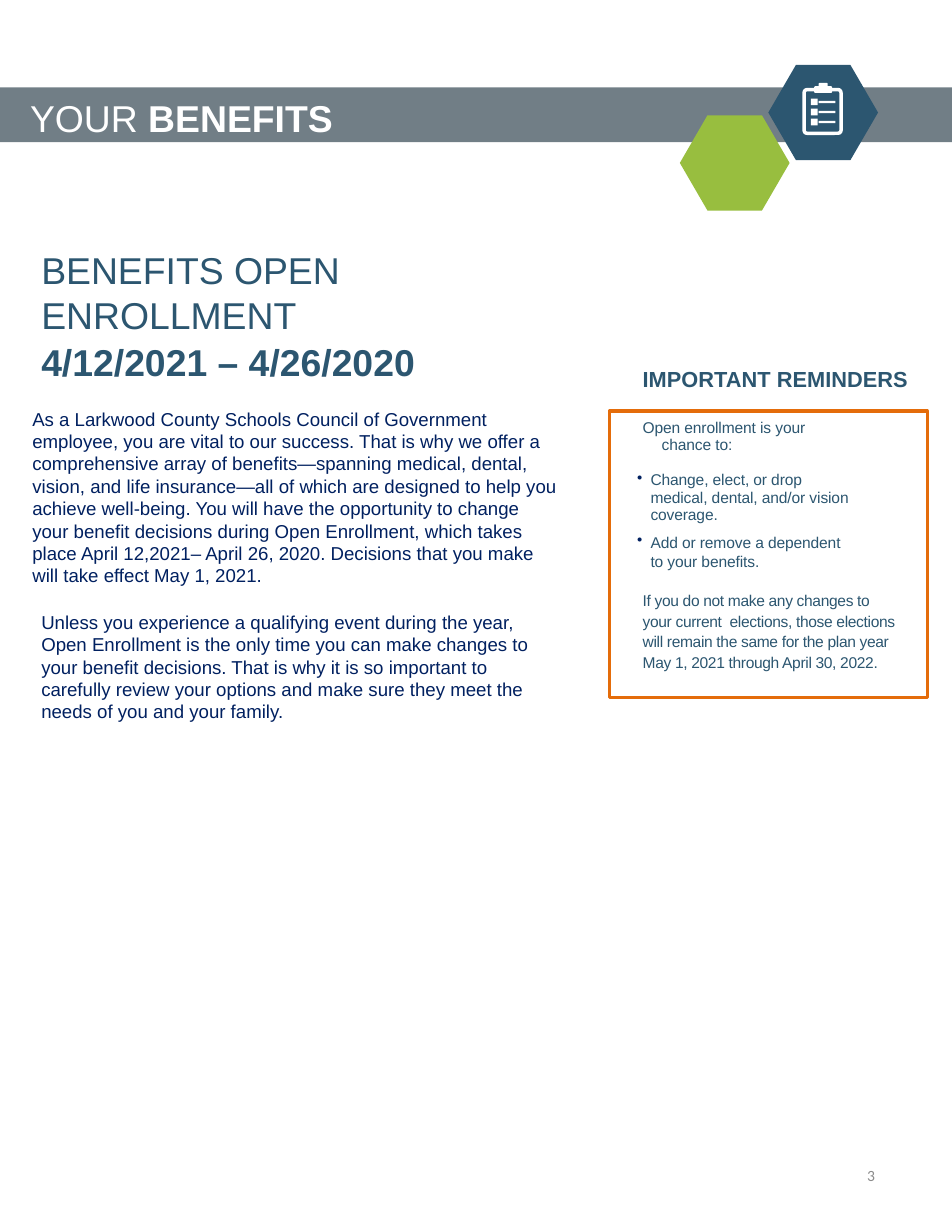
from dataclasses import dataclass

from lxml.etree import SubElement
from pptx import Presentation
from pptx.dml.color import RGBColor
from pptx.enum.shapes import MSO_SHAPE as Shape
from pptx.enum.text import MSO_ANCHOR as Anchor, PP_ALIGN as Align
from pptx.oxml.ns import qn
from pptx.util import Inches, Pt


@dataclass(frozen=True)
class Theme:
    white: str = "FFFFFF"
    slate: str = "717E86"
    blue: str = "2C5670"
    green: str = "98BE3F"
    navy: str = "002060"
    orange: str = "E46C0A"
    grey: str = "8C8C8C"
    title: float = 24
    heading: float = 14
    body: float = 12
    small: float = 10


theme = Theme()
deck = Presentation()
deck.slide_width, deck.slide_height = Inches(8.5), Inches(11)
page = deck.slides.add_slide(deck.slide_layouts[6])


def add_block(kind, left, top, width, height, fill=None, line=None, weight=2):
    block = page.shapes.add_shape(kind, *map(Inches, (left, top, width, height)))
    block.shadow.inherit = False
    for part, color in ((block.fill, fill), (block.line.fill, line)):
        if color:
            part.solid()
            part.fore_color.rgb = RGBColor.from_string(color)
        else:
            part.background()
    if line:
        block.line.width = Pt(weight)
    return block


def add_text(left, top, width, height, paragraphs, wrap=True):
    """Add a text box; each paragraph is its (text, bold) spans and a dict of options."""
    box = page.shapes.add_textbox(*map(Inches, (left, top, width, height)))
    frame = box.text_frame
    frame.word_wrap = wrap
    for number, (spans, look) in enumerate(paragraphs):
        para = frame.paragraphs[0] if number == 0 else frame.add_paragraph()
        props = para._p.get_or_add_pPr()
        for name in ("marL", "marR", "indent"):
            props.set(name, str(Inches(look.get(name, 0))))
        if look.get("bullet"):
            color = SubElement(props, qn("a:buClr"))
            SubElement(color, qn("a:srgbClr"), val=theme.navy)
            SubElement(props, qn("a:buChar"), char="•")
        para.space_before = Pt(look.get("before", 0))
        para.line_spacing = look.get("leading", 1.0)
        para.font.name = look.get("font", "Arial")
        para.font.size = Pt(look["size"])
        para.font.color.rgb = RGBColor.from_string(look["color"])
        for text, bold in spans:
            span = para.add_run()
            span.text = text
            span.font.bold = bold
            if "tracking" in look:
                span._r.get_or_add_rPr().set("spc", str(look["tracking"]))
    return box


# Banner and hexagons
add_block(Shape.RECTANGLE, 0, 0.78, 8.5, 0.49, theme.slate)
for left, top, color in ((6.86, 0.58, theme.blue), (6.07, 1.03, theme.green)):
    hexagon = add_block(Shape.HEXAGON, left, top, 0.98, 0.85, color)
    hexagon.adjustments[0] = 0.29

# Clipboard icon
board = add_block(Shape.ROUNDED_RECTANGLE, 7.18, 0.8, 0.33, 0.39, line=theme.white, weight=2.25)
board.adjustments[0] = 0.08
add_block(Shape.ROUNDED_RECTANGLE, 7.27, 0.77, 0.16, 0.06, theme.white)
add_block(Shape.ROUNDED_RECTANGLE, 7.31, 0.74, 0.08, 0.05, theme.white)
for row in range(3):
    top = 0.88 + 0.09 * row
    add_block(Shape.RECTANGLE, 7.24, top, 0.06, 0.06, theme.white)
    add_block(Shape.RECTANGLE, 7.31, top + 0.02, 0.15, 0.02, theme.white)

add_text(0, 0.8, 3.1, 0.5, [
    ([("YOUR ", False), ("BENEFITS", True)],
     dict(size=theme.title, color=theme.white, marL=0.17, before=0.8)),
], wrap=False)

# Main column
headline = dict(size=theme.title, color=theme.blue, marL=0.08, before=1.1)
body = dict(size=theme.body, color=theme.navy, before=15.4)
add_text(0.19, 2.16, 4.89, 4.65, [
    ([("BENEFITS OPEN ENROLLMENT", False)], headline),
    ([("4/12/2021 – 4/26/2020", True)], headline),
    ([("As a Larkwood County Schools Council of Government employee, you are vital to our "
       "success. That is why we offer a comprehensive array of benefits—spanning medical, "
       "dental, vision, and life insurance—all of which are designed to help you achieve "
       "well-being. You will have the opportunity to change your benefit decisions during "
       "Open Enrollment, which takes place April 12,2021– April 26, 2020. Decisions that "
       "you make will take effect May 1, 2021.", False)], body),
    ([("Unless you experience a qualifying event during the year, Open Enrollment is the "
       "only time you can make changes to your benefit decisions. That is why it is so "
       "important to carefully review your options and make sure they meet the needs of "
       "you and your family.", False)], body | dict(marL=0.08)),
])

# Reminders
add_block(Shape.RECTANGLE, 5.44, 3.67, 2.84, 2.56, line=theme.orange)
add_text(5.59, 3.22, 2.97, 0.34, [
    ([("IMPORTANT REMINDERS", True)],
     dict(size=theme.heading, color=theme.blue, marL=0.05)),
])
small = dict(size=theme.small, color=theme.blue, tracking=-5)
bullet = small | dict(bullet=True, marL=0.12, indent=-0.12, marR=0.4)
add_text(5.59, 3.69, 2.53, 2.54, [
    ([("Open enrollment is your chance to:", False)],
     small | dict(marL=0.22, indent=-0.17, marR=0.4, leading=Pt(11.2))),
    ([("Change, elect, or drop medical, dental, and/or vision coverage.", False)],
     bullet | dict(before=11.4, leading=Pt(11.2))),
    ([("Add or remove a dependent to your benefits.", False)], bullet | dict(before=5.9)),
    ([("If you do not make any changes to your current  elections, those elections will "
       "remain the same for the plan year May 1, 2021 through April 30, 2022.", False)],
     small | dict(marL=0.05, before=12.3, leading=1.1, tracking=-20)),
])

# Page number
footer = add_text(6, 10.2, 1.91, 0.59, [
    ([("3", False)], dict(size=theme.small, color=theme.grey, font="Calibri")),
])
footer.text_frame.vertical_anchor = Anchor.MIDDLE
footer.text_frame.paragraphs[0].alignment = Align.RIGHT

deck.save("out.pptx")
